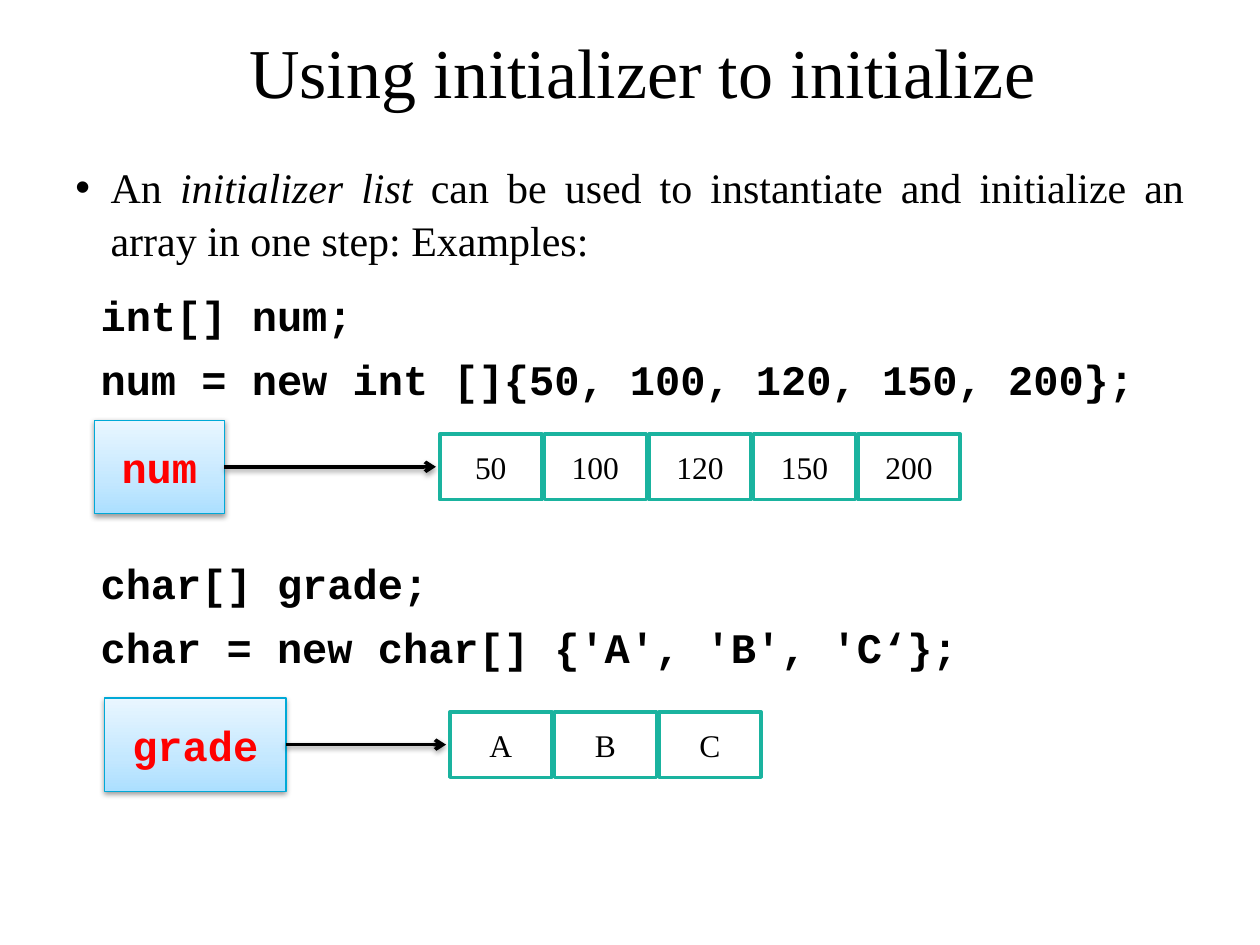
from copy import deepcopy

from pptx import Presentation
from pptx.dml.color import RGBColor
from pptx.enum.shapes import MSO_CONNECTOR, MSO_SHAPE
from pptx.enum.text import MSO_ANCHOR, PP_ALIGN
from pptx.oxml import parse_xml
from pptx.oxml.ns import qn
from pptx.util import Inches, Pt

WIDE, HIGH = Inches(10), Inches(7.5)
BLACK = RGBColor(0x00, 0x00, 0x00)
WHITE = RGBColor(0xFF, 0xFF, 0xFF)
RED = RGBColor(0xFF, 0x00, 0x00)
TEAL = RGBColor(0x1A, 0xB3, 0x9F)
BLUE = RGBColor(0x00, 0xA9, 0xD7)
SKY = [
    (0, RGBColor(0xAC, 0xDF, 0xFF)),
    (0.35, RGBColor(0xC4, 0xE8, 0xFF)),
    (1, RGBColor(0xE9, 0xF6, 0xFF)),
]

SERIF, MONO = "Times New Roman", "Courier New"
HEAD = {"name": SERIF, "size": Pt(40), "bold": False}
PROSE = {"name": SERIF, "size": Pt(24)}
CODE = {"name": MONO, "size": Pt(24), "bold": True}
ITEM = {"name": SERIF, "size": Pt(18)}

# Shares of the slide, in percent
NAME_H, CELL_W, CELL_H = 9.87, 8.1, 6.93
STEP, GAP = 8.3, 0.3

NS = 'xmlns:a="http://schemas.openxmlformats.org/drawingml/2006/main"'
SHADOW = (
    f'<a:effectLst {NS}><a:outerShdw blurRad="{Pt(3.1)}" dist="{Pt(1.6)}" '
    'dir="5400000" rotWithShape="0"><a:srgbClr val="000000">'
    '<a:alpha val="38000"/></a:srgbClr></a:outerShdw></a:effectLst>'
)


def share(*spots):
    """Turn percent pairs (x, y, ...) into slide lengths."""
    full = (WIDE, HIGH)
    return [round(full[i % 2] * spot / 100) for i, spot in enumerate(spots)]


def style(item, form):
    for key, value in form.items():
        setattr(item, key, value)


def write(para, text, form, color=BLACK, **more):
    run = para.add_run()
    run.text = text
    style(run.font, form | more)
    run.font.color.rgb = color


def add_title(slide, text):
    title = slide.shapes.title
    spots = share(3.5, 2.13, 95, 10.67)
    style(title, dict(zip(("left", "top", "width", "height"), spots)))
    title.text_frame.vertical_anchor = MSO_ANCHOR.MIDDLE
    para = title.text_frame.paragraphs[0]
    para.alignment = PP_ALIGN.CENTER
    write(para, text, HEAD)


def indent(para, left, first=0, mark=None):
    props = para._p.get_or_add_pPr()
    props.set("marL", str(Inches(left)))
    props.set("indent", str(Inches(first)))
    if mark:
        props.append(parse_xml(f'<a:buFont {NS} typeface="Arial"/>'))
        props.append(parse_xml(f'<a:buChar {NS} char="{mark}"/>'))


def add_body(slide):
    frame = slide.shapes.add_textbox(*share(5, 16.13, 90, 78.53)).text_frame
    frame.word_wrap = True
    para = frame.paragraphs[0]
    style(para, {"alignment": PP_ALIGN.JUSTIFY, "line_spacing": 1.06,
                 "space_after": Pt(6)})
    indent(para, 0.28, -0.28, "•")
    write(para, "An ", PROSE)
    write(para, "initializer list", PROSE, italic=True)
    write(para, " can be used to instantiate and initialize an array "
                "in one step: Examples:", PROSE)

    lines = [
        ("int[] num;", 6),
        ("num = new int []{50, 100, 120, 150, 200};", 6),
        ("char[] grade;", 86),
        ("char = new char[] {'A', 'B', 'C‘};", 6),
    ]
    for text, space in lines:
        para = frame.add_paragraph()
        style(para, {"alignment": PP_ALIGN.JUSTIFY, "line_spacing": 1.06,
                     "space_before": Pt(space)})
        indent(para, 0.2)
        write(para, text, CODE)


def add_box(group, spots, text, form, color, edge, width):
    box = group.add_shape(MSO_SHAPE.RECTANGLE, *share(*spots))
    box.shadow.inherit = False
    box.line.color.rgb = edge
    box.line.width = Pt(width)
    frame = box.text_frame
    style(frame, {"word_wrap": False, "vertical_anchor": MSO_ANCHOR.MIDDLE})
    para = frame.paragraphs[0]
    para.alignment = PP_ALIGN.CENTER
    write(para, text, form, color)
    return box


def cast(shape):
    """Give the shape a soft shadow below it."""
    props = shape._element.spPr
    for old in props.findall(qn("a:effectLst")):
        props.remove(old)
    props.append(parse_xml(SHADOW))


def shade(box):
    """Fill the box with the sky gradient, rising from the bottom."""
    box.fill.gradient()
    box.fill.gradient_angle = 90
    stops = box._element.spPr.find(".//" + qn("a:gsLst"))
    stops.append(deepcopy(stops[-1]))
    for stop, (spot, color) in zip(box.fill.gradient_stops, SKY):
        stop.position = spot
        stop.color.rgb = color


def add_arrow(group, start, end, mid):
    arrow = group.add_connector(
        MSO_CONNECTOR.STRAIGHT, *share(start, mid, end, mid))
    arrow.line.color.rgb = BLACK
    arrow.line.width = Pt(2)
    arrow.line._get_or_add_ln().append(
        parse_xml(f'<a:tailEnd {NS} type="arrow"/>'))
    cast(arrow)


def add_array(slide, name, items, left, width, first, mid):
    """Draw a name box that points to a row of cells."""
    group = slide.shapes.add_group_shape().shapes
    spots = (left, mid - NAME_H / 2, width, NAME_H)
    box = add_box(group, spots, name, CODE, RED, BLUE, 0.75)
    shade(box)
    cast(box)
    add_arrow(group, left + width, first - GAP, mid)
    for i, item in enumerate(items):
        spots = (first + i * STEP, mid - CELL_H / 2, CELL_W, CELL_H)
        cell = add_box(group, spots, item, ITEM, BLACK, TEAL, 2)
        cell.fill.solid()
        cell.fill.fore_color.rgb = WHITE


def main():
    deck = Presentation()
    deck.slide_width, deck.slide_height = WIDE, HIGH
    slide = deck.slides.add_slide(deck.slide_layouts[5])
    add_title(slide, "Using initializer to initialize")
    add_body(slide)
    nums = ["50", "100", "120", "150", "200"]
    add_array(slide, "num", nums, 7.5, 10.3, 34.9, 49.4)
    add_array(slide, "grade", "ABC", 8.3, 14.4, 35.7, 78.8)
    deck.save("out.pptx")


if __name__ == "__main__":
    main()
